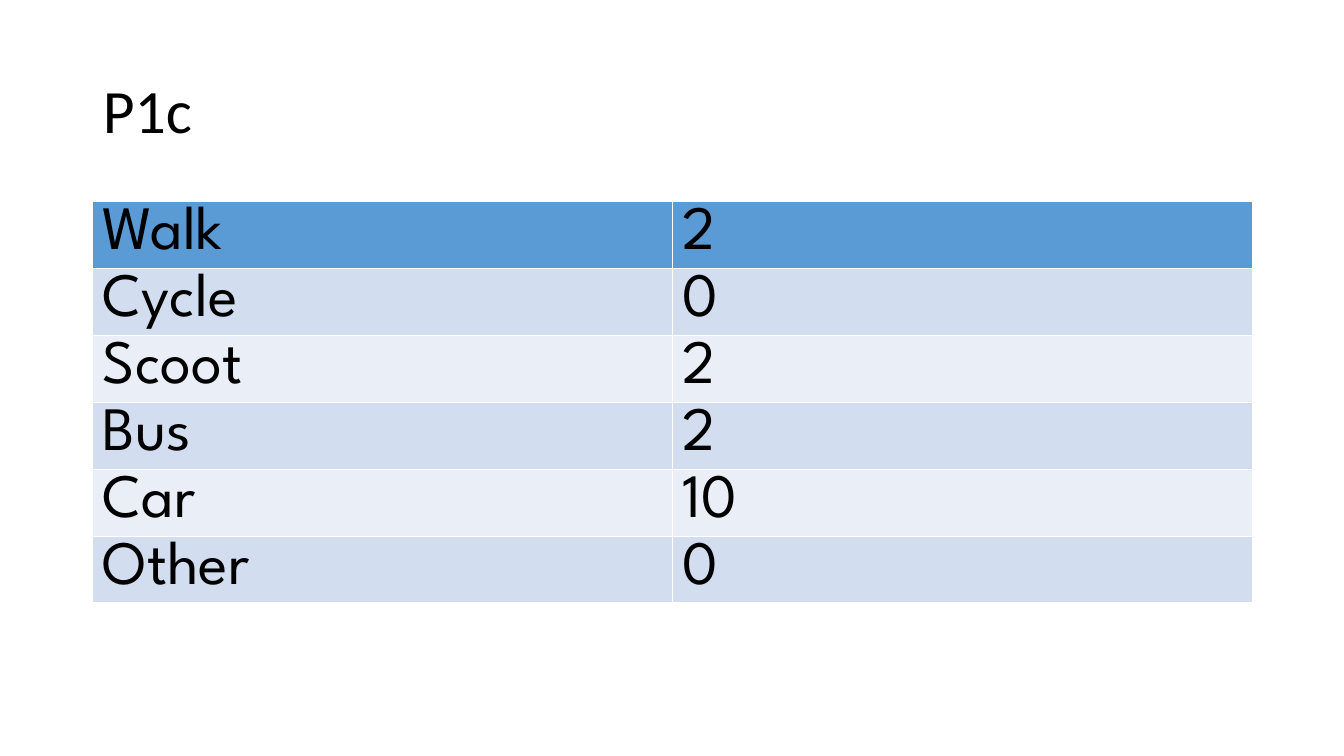
from pptx import Presentation
from pptx.dml.color import RGBColor
from pptx.enum.text import MSO_ANCHOR, PP_ALIGN
from pptx.util import Inches, Pt

COLOURS = {
    "text": "000000",
    "header": "5B9BD5",
    "odd_band": "D2DEEF",
    "even_band": "EAEFF7",
}
LEFT, WIDTH = 0.92, 11.5
ROW_HEIGHT = 0.66

TRAVEL_COUNTS = [
    ("Walk", 2),
    ("Cycle", 0),
    ("Scoot", 2),
    ("Bus", 2),
    ("Car", 10),
    ("Other", 0),
]


def write_text(frame, text, font, size=44, colour="text", line_spacing=1.0):
    paragraph = frame.paragraphs[0]
    paragraph.alignment = PP_ALIGN.LEFT
    paragraph.line_spacing = line_spacing
    run = paragraph.add_run()
    run.text = text
    run.font.name = font
    run.font.size = Pt(size)
    run.font.bold = False
    run.font.color.rgb = RGBColor.from_string(COLOURS[colour])


class SlideBuilder:
    title_font = "Calibri"
    table_font = "League Spartan"

    def __init__(self, slide):
        self.slide = slide

    def title(self, text, left, top, width, height):
        heading = self.slide.shapes.title
        heading.left, heading.top = Inches(left), Inches(top)
        heading.width, heading.height = Inches(width), Inches(height)
        heading.text_frame.vertical_anchor = MSO_ANCHOR.MIDDLE
        write_text(heading.text_frame, text, self.title_font, line_spacing=0.9)

    def table(self, rows, left, top, width, row_height):
        counts = self.slide.shapes.add_table(
            len(rows), len(rows[0]), Inches(left), Inches(top),
            Inches(width), Inches(row_height * len(rows))).table
        for r, values in enumerate(rows):
            counts.rows[r].height = Inches(row_height)
            band = "header" if r == 0 else "odd_band" if r % 2 else "even_band"
            for c, value in enumerate(values):
                cell = counts.cell(r, c)
                cell.fill.solid()
                cell.fill.fore_color.rgb = RGBColor.from_string(COLOURS[band])
                write_text(cell.text_frame, str(value), self.table_font)


def main():
    deck = Presentation()
    deck.slide_width, deck.slide_height = Inches(13.33), Inches(7.5)
    title_only = deck.slide_layouts[5]
    builder = SlideBuilder(deck.slides.add_slide(title_only))

    # Class name
    builder.title("P1c", LEFT, 0.4, WIDTH, 1.45)

    # Travel counts
    builder.table(TRAVEL_COUNTS, LEFT, 2, WIDTH, ROW_HEIGHT)

    deck.save("out.pptx")


if __name__ == "__main__":
    main()
